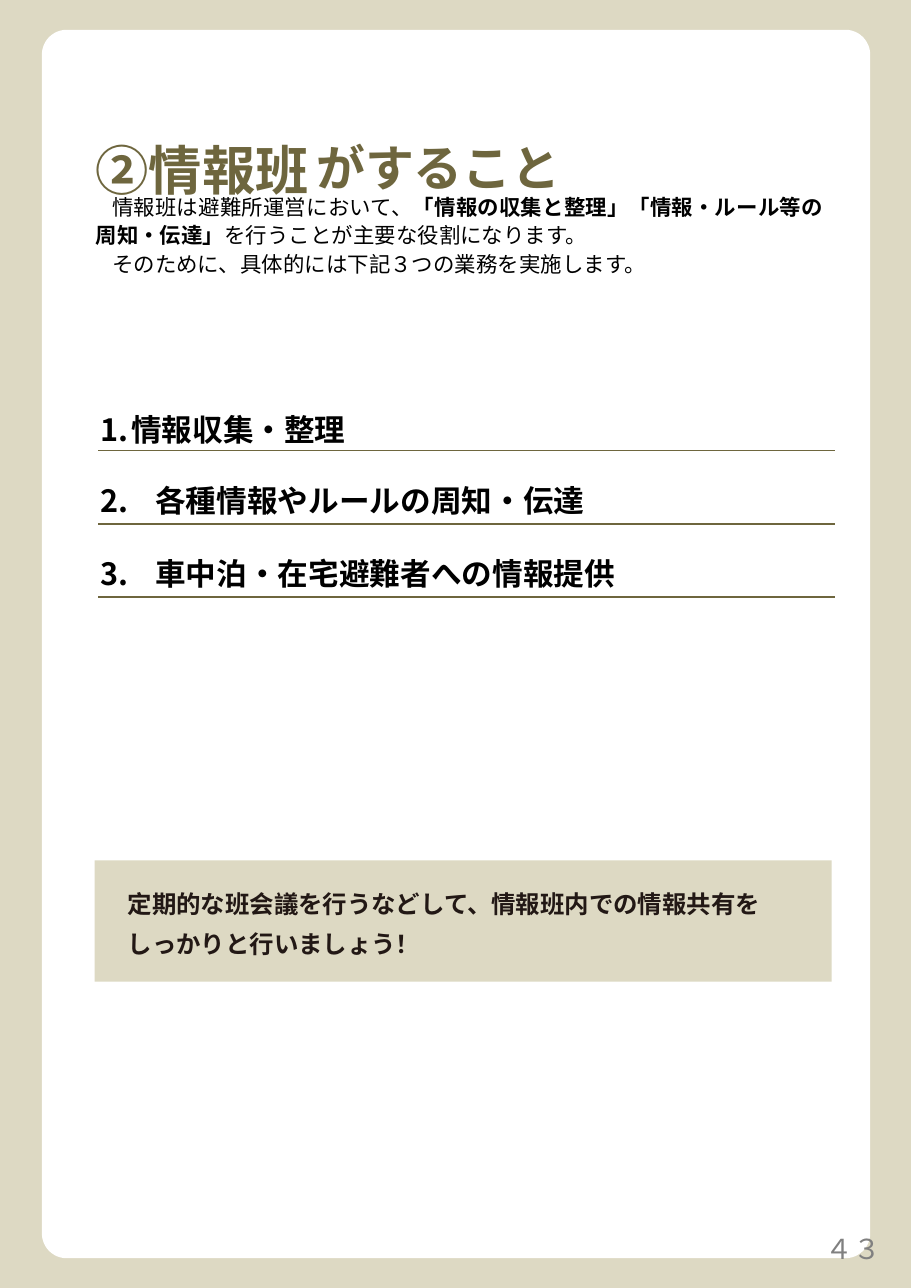
from dataclasses import dataclass

from lxml import etree
from pptx import Presentation
from pptx import util as u
from pptx.dml.color import RGBColor
from pptx.enum import shapes, text
from pptx.oxml import ns


@dataclass(frozen=True)
class Theme:
    font: str = "Noto Sans CJK JP"
    number_font: str = "Arial"
    sand: str = "DDD9C3"
    white: str = "FFFFFF"
    olive: str = "6E663E"
    black: str = "000000"
    brown: str = "221815"
    gray: str = "808080"
    title: int = 60
    title_tail: int = 32
    heading: int = 20
    number: int = 18
    callout: int = 16
    body: int = 14
    rule: float = 1.04


def add_run(p, words, font, size, color, bold=False, baseline=0, spacing=0):
    r = p.add_run()
    r.text = words
    r.font.name = font
    r.font.size = u.Pt(size)
    r.font.bold = bold
    r.font.color.rgb = RGBColor.from_string(color)
    rPr = r.font._element
    if baseline:
        rPr.set("baseline", str(baseline * 1000))
    if spacing:
        rPr.set("spc", str(round(spacing * 100)))
    etree.SubElement(rPr, ns.qn("a:ea"), typeface=font)


class Page:
    def __init__(self, s, theme):
        self.s = s
        self.theme = theme

    def panel(self, x, y, w, h, color, radius=None):
        kind = shapes.MSO_SHAPE.RECTANGLE if radius is None else shapes.MSO_SHAPE.ROUNDED_RECTANGLE
        sp = self.s.shapes.add_shape(kind, *map(u.Inches, (x, y, w, h)))
        if radius is not None:
            sp.adjustments[0] = radius
        sp.shadow.inherit = False
        sp.fill.solid()
        sp.fill.fore_color.rgb = RGBColor.from_string(color)
        sp.line.fill.background()

    def rule(self, x, y, w):
        line = self.s.shapes.add_connector(
            shapes.MSO_CONNECTOR.STRAIGHT, *map(u.Inches, (x, y, x + w, y)))
        line.line.color.rgb = RGBColor.from_string(self.theme.olive)
        line.line.width = u.Pt(self.theme.rule)
        etree.SubElement(line._element.spPr, ns.qn("a:effectLst"))

    def text(self, x, y, w, h, paragraphs, inset=(0, 0.01, 0, 0), align=None,
             margin=0, indent=0, leading=None, before=0, numbered=False, tab=None):
        tf = self.s.shapes.add_textbox(*map(u.Inches, (x, y, w, h))).text_frame
        tf.word_wrap = True
        tf.auto_size = text.MSO_AUTO_SIZE.SHAPE_TO_FIT_TEXT
        tf.margin_left, tf.margin_top, tf.margin_right, tf.margin_bottom = map(u.Inches, inset)
        for i, runs in enumerate(paragraphs):
            p = tf.add_paragraph() if i else tf.paragraphs[0]
            p.alignment = align
            p.line_spacing = leading
            p.space_before = u.Pt(before)
            pPr = p._p.get_or_add_pPr()
            pPr.set("marL", str(u.Inches(margin)))
            pPr.set("indent", str(u.Inches(indent)))
            if numbered:
                etree.SubElement(pPr, ns.qn("a:buAutoNum"), type="arabicPeriod")
            if tab:
                tabs = etree.SubElement(pPr, ns.qn("a:tabLst"))
                etree.SubElement(tabs, ns.qn("a:tab"), pos=str(u.Inches(tab)), algn="l")
            for words, style in runs:
                add_run(p, words, **style)


def main():
    prs = Presentation()
    prs.slide_width, prs.slide_height = u.Inches(8.27), u.Inches(11.69)
    t = Theme()
    page = Page(prs.slides.add_slide(prs.slide_layouts[6]), t)

    page.panel(0, 0, 8.27, 11.69, t.sand)
    page.panel(0.38, 0.27, 7.52, 11.15, t.white, radius=0.03)

    title = dict(font=t.font, color=t.olive, bold=True)
    lead = dict(title, size=t.title, baseline=-4)
    page.text(0.86, 0.85, 4.67, 0.69, [[
        ("②情報", lead),
        ("班", dict(lead, spacing=4.8)),
        ("がすること", dict(title, size=t.title_tail)),
    ]], margin=0.01, before=1)

    for i in range(3):
        page.rule(0.89, 4.09 + i * 0.665, 6.69)
    heading = dict(font=t.font, size=t.heading, color=t.black, bold=True)
    page.text(0.89, 3.72, 3.59, 0.35, [[("情報収集・整理", heading)]],
              margin=0.3, indent=-0.28, before=1, numbered=True, tab=0.3)
    for y, words in ((4.36, "2.\t各種情報やルールの周知・伝達"),
                     (5.03, "3.\t車中泊・在宅避難者への情報提供")):
        page.text(0.9, y, 5.61, 0.35, [[(words, heading)]], margin=0.01, tab=0.3)

    page.panel(0.86, 7.81, 6.69, 1.1, t.sand)
    callout = dict(font=t.font, size=t.callout, color=t.brown, bold=True)
    page.text(1.15, 7.97, 6.17, 0.71, [[
        ("定期的な班会議を行うなどして、情報班内での情報共有をしっかりと行いましょう！", callout),
    ]], margin=0.01, leading=1.35, before=1)

    body = dict(font=t.font, size=t.body, color=t.black)
    page.text(0.77, 1.69, 6.8, 0.87, [
        [("情報班は避難所運営において、", body),
         ("「情報の収集と整理」「情報・ルール等の周知・伝達」", dict(body, bold=True)),
         ("を行うことが主要な役割になります。", body)],
        [("そのために、具体的には下記３つの業務を実施します。", body)],
    ], inset=(0.1, 0.05, 0.1, 0.05), align=text.PP_ALIGN.JUSTIFY, indent=0.15, leading=1.1)

    number = dict(font=t.number_font, size=t.number, color=t.gray)
    page.text(7.39, 11.13, 0.71, 0.4, [[("４３", number)]],
              inset=(0.1, 0.05, 0.1, 0.05), align=text.PP_ALIGN.CENTER)

    prs.save("out.pptx")


if __name__ == "__main__":
    main()
